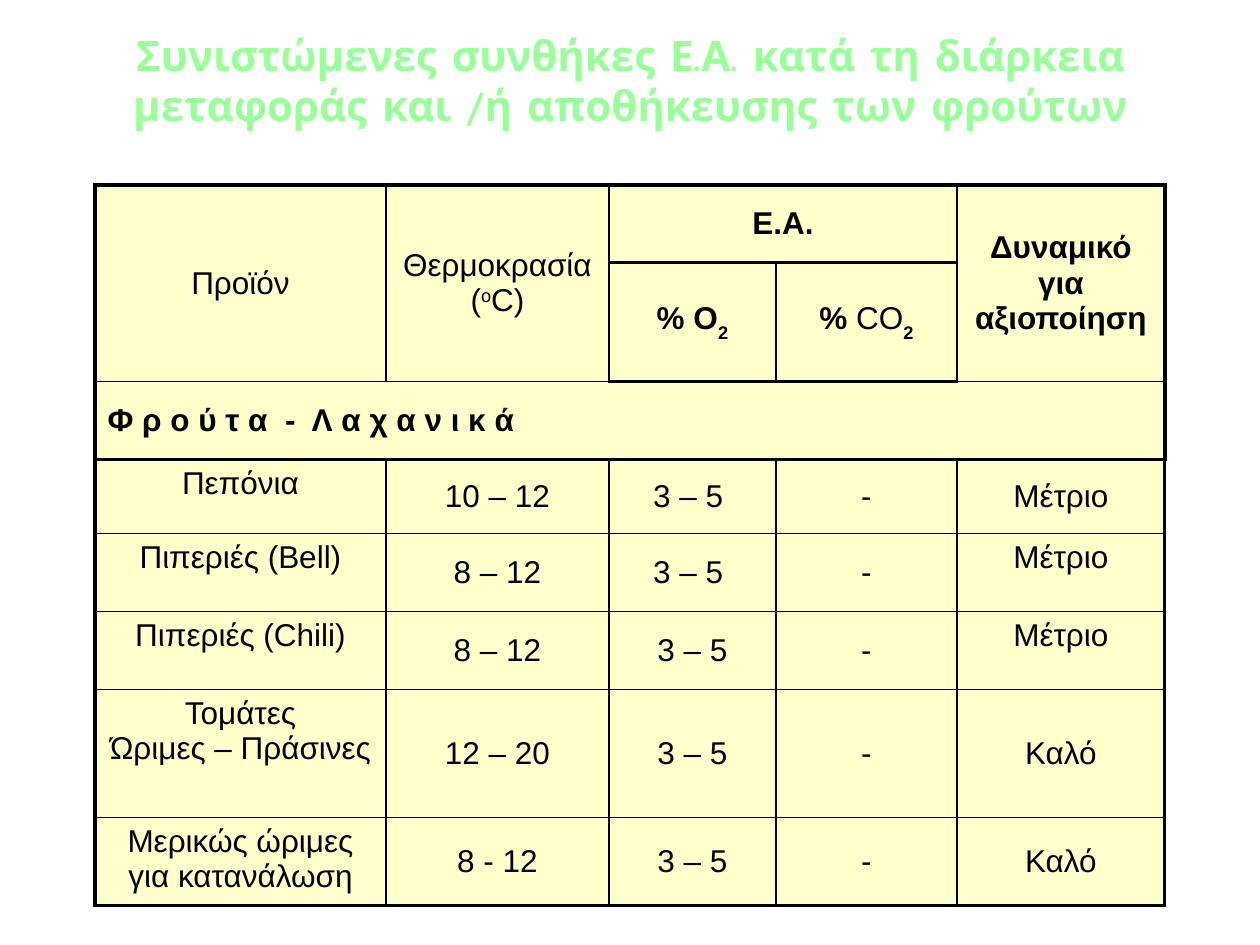
from dataclasses import dataclass
from itertools import product

from lxml.etree import SubElement
from pptx import Presentation
from pptx.dml.color import RGBColor
from pptx.enum.text import MSO_ANCHOR, PP_ALIGN
from pptx.oxml.ns import qn
from pptx.util import Emu, Pt

PIXEL = 914400 / 126
COLORS = {"title": "99FF99", "text": "000000", "cell": "FFFFCC", "border": "000000"}
NO_GRID_STYLE = "{2D5ABB26-0587-4C30-8999-92F81FD0307C}"
COLUMN_WIDTHS = (291, 223, 167, 181, 208)
ROW_HEIGHTS = (78, 78, 78, 74, 78, 78, 128, 88)
LAST_COLUMN, LAST_ROW = len(COLUMN_WIDTHS), len(ROW_HEIGHTS)


@dataclass
class TextPart:
    text: str
    bold: bool = False
    baseline: int = 0  # percent above (+) or below (-) the line


@dataclass
class TableEntry:
    row: int
    column: int
    paragraphs: list[list[TextPart]]
    row_span: int = 1
    column_span: int = 1
    alignment: PP_ALIGN = PP_ALIGN.CENTER
    anchor: MSO_ANCHOR = MSO_ANCHOR.MIDDLE


def px(value: int) -> Emu:
    return Emu(round(value * PIXEL))


def set_values(target, values: dict) -> None:
    for name, value in values.items():
        setattr(target, name, value)


def write_paragraph(paragraph, parts: list[TextPart], alignment: PP_ALIGN,
                    font_name: str, size: int, color: str) -> None:
    paragraph.alignment = alignment
    for part in parts:
        run = paragraph.add_run()
        run.text = part.text
        set_values(run.font, {"name": font_name, "size": Pt(size), "bold": part.bold})
        run.font.color.rgb = RGBColor.from_string(COLORS[color])
        if part.baseline:
            run._r.get_or_add_rPr().set("baseline", str(part.baseline * 1000))


def add_border(cell, tag: str, width: float) -> None:
    line = SubElement(cell._tc.get_or_add_tcPr(), qn(f"a:{tag}"), w=str(Pt(width)))
    SubElement(SubElement(line, qn("a:solidFill")), qn("a:srgbClr"), val=COLORS["border"])


def horizontal_width(edge: int, column: int) -> float:
    """Thick lines: table top and bottom, around the E.A. cells, under the section."""
    return 2 if edge in (0, 3, LAST_ROW) or (edge in (1, 2) and column in (2, 3)) else 1


def vertical_width(edge: int, row: int) -> float:
    if edge == LAST_COLUMN:
        return 2.25 if row < 3 else 2
    return 2 if edge == 0 else 1


def draw_entry(table, entry: TableEntry) -> None:
    top, left = entry.row, entry.column
    bottom, right = top + entry.row_span, left + entry.column_span
    origin = table.cell(top, left)
    if entry.row_span * entry.column_span > 1:
        origin.merge(table.cell(bottom - 1, right - 1))

    # Borders on the outside of the span, complete on its first cell
    borders = {
        "lnL": vertical_width(left, top),
        "lnR": vertical_width(right, top),
        "lnT": horizontal_width(top, left),
        "lnB": horizontal_width(bottom, left),
    }
    for row, column in product(range(top, bottom), range(left, right)):
        cell = table.cell(row, column)
        outside = {"lnL": column == left, "lnR": column == right - 1,
                   "lnT": row == top, "lnB": row == bottom - 1}
        for tag, width in borders.items():
            if outside[tag] or not cell.is_spanned:
                add_border(cell, tag, width)
        cell.fill.solid()
        cell.fill.fore_color.rgb = RGBColor.from_string(COLORS["cell"])

    # Text
    origin.vertical_anchor = entry.anchor
    frame = origin.text_frame
    for index, parts in enumerate(entry.paragraphs):
        paragraph = frame.add_paragraph() if index else frame.paragraphs[0]
        write_paragraph(paragraph, parts, entry.alignment, "Arial", 18, "text")


HEADER = [
    TableEntry(0, 0, [[TextPart("Προϊόν")]], row_span=2),
    TableEntry(0, 1, [[TextPart("Θερμοκρασία")],
                      [TextPart("("), TextPart("ο", baseline=30), TextPart("C)")]], row_span=2),
    TableEntry(0, 2, [[TextPart("Ε.Α.", True)]], column_span=2),
    TableEntry(0, 4, [[TextPart("Δυναμικό για αξιοποίηση", True)]], row_span=2),
    TableEntry(1, 2, [[TextPart("% Ο", True), TextPart("2", True, -30)]]),
    TableEntry(1, 3, [[TextPart("% ", True), TextPart("CO"), TextPart("2", True, -30)]]),
    TableEntry(2, 0, [[TextPart("Φ ρ ο ύ τ α  -  Λ α χ α ν ι κ ά", True)]],
               column_span=5, alignment=PP_ALIGN.LEFT),
]
PRODUCTS = [
    ("Πεπόνια", "10 – 12", "3 – 5 ", "-", "Μέτριο"),
    ("Πιπεριές (Bell)", "8 – 12", "3 – 5 ", "-", "Μέτριο"),
    ("Πιπεριές (Chili)", "8 – 12", "3 – 5", "-", "Μέτριο"),
    ("Τομάτες\nΏριμες – Πράσινες", "12 – 20", "3 – 5", "-", "Καλό"),
    ("Μερικώς ώριμες για κατανάλωση", "8 - 12", "3 – 5", "-", "Καλό"),
]
TOP_ANCHORED = {(4, 4), (5, 4)} | {(row, 0) for row in range(3, LAST_ROW)}


def product_entries() -> list[TableEntry]:
    return [
        TableEntry(row, column, [[TextPart(line)] for line in text.split("\n")],
                   anchor=MSO_ANCHOR.TOP if (row, column) in TOP_ANCHORED else MSO_ANCHOR.MIDDLE)
        for row, texts in enumerate(PRODUCTS, start=3)
        for column, text in enumerate(texts)
    ]


def add_title(slide) -> None:
    box = slide.shapes.add_textbox(px(95), px(35), px(1071), px(90))
    set_values(box.text_frame, {"word_wrap": True, "vertical_anchor": MSO_ANCHOR.MIDDLE})
    title = ("Συνιστώμενες συνθήκες Ε.Α. κατά τη διάρκεια "
             "μεταφοράς και /ή αποθήκευσης των φρούτων")
    write_paragraph(box.text_frame.paragraphs[0], [TextPart(title, True)],
                    PP_ALIGN.CENTER, "Comic Neue", 24, "title")


def add_conditions_table(slide) -> None:
    shape = slide.shapes.add_table(LAST_ROW, LAST_COLUMN, px(95), px(185),
                                   px(sum(COLUMN_WIDTHS)), px(sum(ROW_HEIGHTS)))
    table = shape.table
    set_values(table, {"first_row": False, "horz_banding": False})
    table._tbl.tblPr.find(qn("a:tableStyleId")).text = NO_GRID_STYLE
    for column, width in zip(table.columns, COLUMN_WIDTHS):
        column.width = px(width)
    for row, height in zip(table.rows, ROW_HEIGHTS):
        row.height = px(height)
    for entry in HEADER + product_entries():
        draw_entry(table, entry)


def main() -> None:
    presentation = Presentation()
    set_values(presentation, {"slide_width": px(1260), "slide_height": px(945)})
    slide = presentation.slides.add_slide(presentation.slide_layouts[6])
    add_conditions_table(slide)
    add_title(slide)
    presentation.save("out.pptx")


if __name__ == "__main__":
    main()
